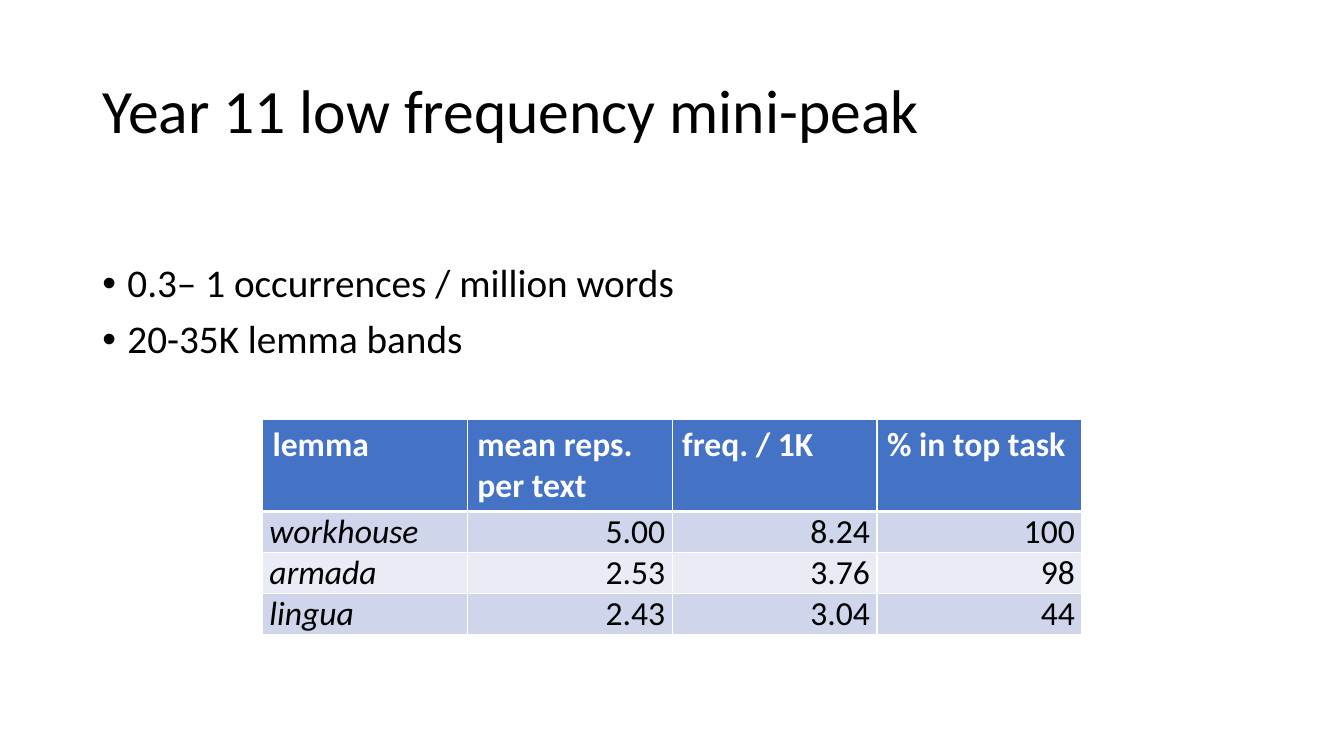
from dataclasses import dataclass

from lxml.etree import SubElement
from pptx import Presentation
from pptx.dml.color import RGBColor
from pptx.enum.text import MSO_ANCHOR as Anchor, MSO_AUTO_SIZE as AutoSize, PP_ALIGN as Align
from pptx.oxml import parse_xml
from pptx.oxml.ns import nsdecls, qn
from pptx.util import Pt


@dataclass(frozen=True)
class Theme:
    font: str = "Calibri"
    text: str = "000000"
    light: str = "FFFFFF"
    header: str = "4472C4"
    bands: tuple = ("CFD5EA", "E9EBF5")
    title_size: int = 44
    body_size: int = 28
    table_size: int = 24


THEME = Theme()
TITLE = "Year 11 low frequency mini-peak"
BULLETS = ["0.3– 1 occurrences / million words", "20-35K lemma bands"]
LEMMA_ROWS = [
    ["lemma", "mean reps. per text", "freq. / 1K", "% in top task"],
    ["workhouse", "5.00", "8.24", "100"],
    ["armada", "2.53", "3.76", "98"],
    ["lingua", "2.43", "3.04", "44"],
]
MARGIN_LEFT, CONTENT_WIDTH = 66, 828
INDENT = 18


def apply(target, formats):
    for name, value in formats.items():
        setattr(target, name, value)


def write(paragraph, text, size, color=THEME.text, **formats):
    run = paragraph.add_run()
    run.text = text
    apply(run.font, {"name": THEME.font, "size": Pt(size), **formats})
    run.font.color.rgb = RGBColor.from_string(color)


def place(shape, left, top, width, height):
    apply(shape, {"left": Pt(left), "top": Pt(top), "width": Pt(width), "height": Pt(height)})


def add_title(slide, text):
    title = slide.shapes.title
    place(title, MARGIN_LEFT, 28.75, CONTENT_WIDTH, 104.4)
    apply(title.text_frame, {"vertical_anchor": Anchor.MIDDLE, "word_wrap": True,
                             "auto_size": AutoSize.NONE})
    paragraph = title.text_frame.paragraphs[0]
    apply(paragraph, {"alignment": Align.LEFT, "line_spacing": 0.9})
    write(paragraph, text, THEME.title_size)


def set_bullet(paragraph):
    properties = paragraph._p.get_or_add_pPr()
    properties.set("marL", str(Pt(INDENT)))
    properties.set("indent", str(-Pt(INDENT)))
    SubElement(properties, qn("a:buFont"), typeface="Arial")
    SubElement(properties, qn("a:buChar"), char="•")


def add_bullets(slide, lines):
    box = slide.shapes.add_textbox(Pt(MARGIN_LEFT), Pt(144), Pt(CONTENT_WIDTH), Pt(342.6))
    frame = box.text_frame
    apply(frame, {"word_wrap": True, "margin_top": Pt(44.4)})
    for index, line in enumerate(lines):
        paragraph = frame.add_paragraph() if index else frame.paragraphs[0]
        apply(paragraph, {"line_spacing": 0.9, "space_before": Pt(10 if index else 0)})
        set_bullet(paragraph)
        write(paragraph, line, THEME.body_size)


def set_borders(cell, widths):
    """Draw the cell's left, right, top and bottom lines, in that order."""
    properties = cell._tc.get_or_add_tcPr()
    for index, (side, width) in enumerate(zip("LRTB", widths)):
        properties.insert(index, parse_xml(
            f'<a:ln{side} {nsdecls("a")} w="{Pt(width)}"><a:solidFill>'
            f'<a:srgbClr val="{THEME.light}"/></a:solidFill></a:ln{side}>'))


def format_cell(cell, text, row, column):
    is_header, is_number = row == 0, row > 0 and column > 0
    fill = THEME.header if is_header else THEME.bands[(row - 1) % 2]
    cell.fill.solid()
    cell.fill.fore_color.rgb = RGBColor.from_string(fill)
    set_borders(cell, (1, 1, 3 if row == 1 else 1, 3 if is_header else 1))
    if not is_header:
        apply(cell, {"margin_left": Pt(5), "margin_right": Pt(5),
                     "margin_top": 0, "margin_bottom": 0})
    cell.vertical_anchor = Anchor.BOTTOM if is_number else Anchor.TOP
    paragraph = cell.text_frame.paragraphs[0]
    paragraph.alignment = Align.RIGHT if is_number else Align.LEFT
    write(paragraph, text, THEME.table_size, THEME.light if is_header else THEME.text,
          bold=is_header, italic=not is_header and column == 0)


def add_lemma_table(slide, rows):
    header_height, row_height, column_width = 65.8, 29.3, 146.3
    column_count = len(rows[0])
    table = slide.shapes.add_table(
        len(rows), column_count, Pt(187.5), Pt(299.5), Pt(column_width * column_count),
        Pt(header_height + row_height * (len(rows) - 1))).table
    for column in table.columns:
        column.width = Pt(column_width)
    for row, values in enumerate(rows):
        table.rows[row].height = Pt(row_height if row else header_height)
        for column, text in enumerate(values):
            format_cell(table.cell(row, column), text, row, column)


def main():
    presentation = Presentation()
    apply(presentation, {"slide_width": Pt(960), "slide_height": Pt(540)})
    slide = presentation.slides.add_slide(presentation.slide_layouts.get_by_name("Title Only"))
    add_title(slide, TITLE)
    add_bullets(slide, BULLETS)
    add_lemma_table(slide, LEMMA_ROWS)
    presentation.save("out.pptx")


if __name__ == "__main__":
    main()
